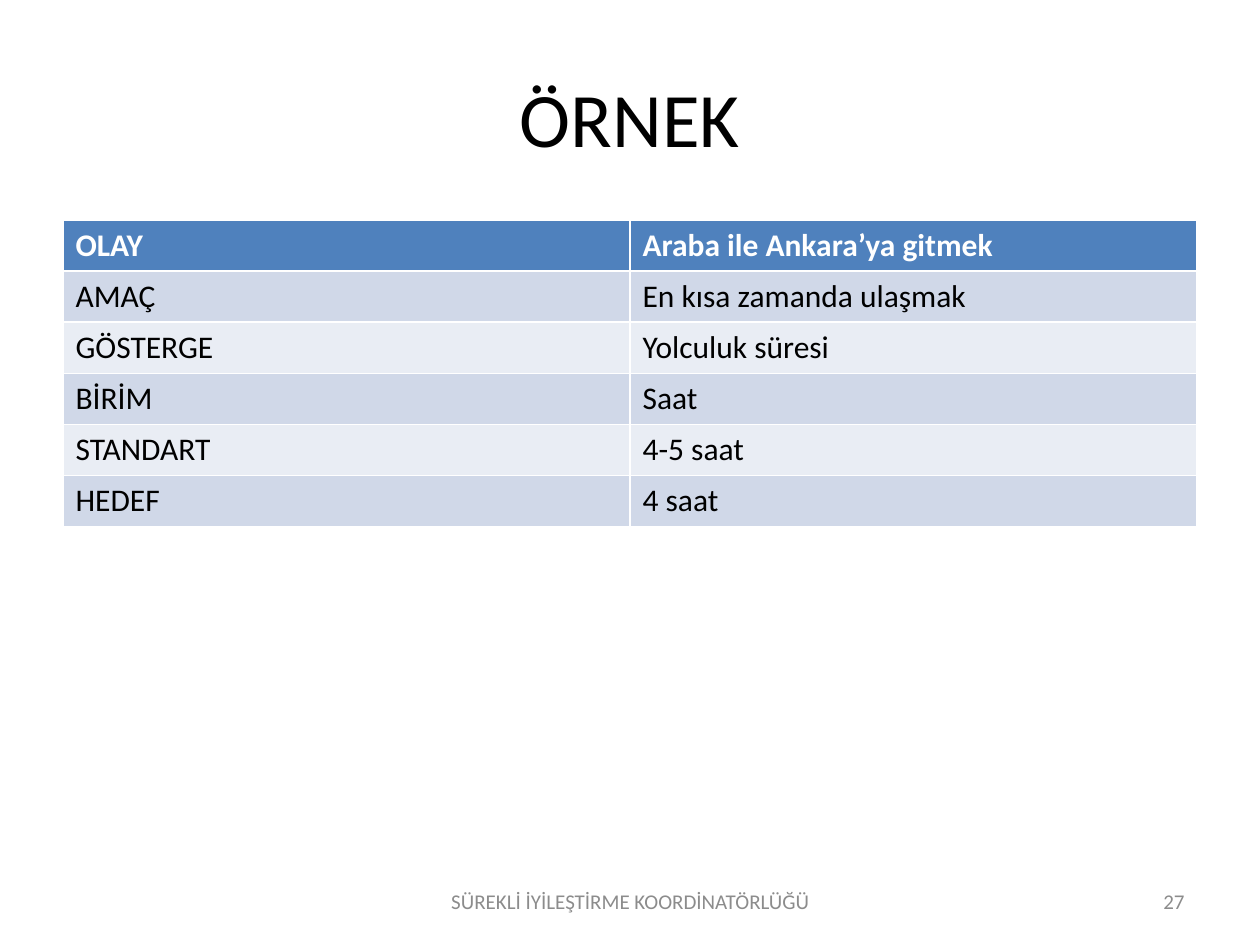
from pptx import Presentation
from pptx.dml.color import RGBColor
from pptx.enum.text import MSO_ANCHOR as Anchor, PP_ALIGN as Align
from pptx.util import Pt

# Content
TITLE = "ÖRNEK"
ROWS = [
    ("OLAY", "Araba ile Ankara’ya gitmek"),
    ("AMAÇ", "En kısa zamanda ulaşmak"),
    ("GÖSTERGE", "Yolculuk süresi"),
    ("BİRİM", "Saat"),
    ("STANDART", "4-5 saat"),
    ("HEDEF", "4 saat"),
]
# Text, left, width, alignment
FOOTERS = [
    ("SÜREKLİ İYİLEŞTİRME KOORDİNATÖRLÜĞÜ", 431, 399, Align.CENTER),
    ("27", 903, 294, Align.RIGHT),
]

# Style and measures
FONT = "Calibri"
HEADER_FILL = "4F81BD"
BAND_FILLS = ("E9EDF4", "D0D8E8")
MARGIN, CONTENT_WIDTH = 63, 1134
TABLE_TOP, ROW_HEIGHT = 220, 51
FOOTER_TOP, FOOTER_HEIGHT = 876, 50


def px(count):
    return round(count * 914400 / 126)


def color(value):
    return RGBColor.from_string(value)


def place(left, top, width, height):
    return [px(length) for length in (left, top, width, height)]


def write(frame, text, size, ink, align=Align.LEFT, bold=False):
    frame.text = text
    para = frame.paragraphs[0]
    para.alignment = align
    font = para.runs[0].font
    font.name, font.size, font.bold = FONT, Pt(size), bold
    font.color.rgb = color(ink)


deck = Presentation()
deck.slide_width, deck.slide_height = px(1260), px(945)
page = deck.slides.add_slide(deck.slide_layouts[5])

# Title
title = page.shapes.title
title.left, title.top, title.width, title.height = place(MARGIN, 38, CONTENT_WIDTH, 158)
title.text_frame.vertical_anchor = Anchor.MIDDLE
write(title.text_frame, TITLE, 44, "000000", Align.CENTER)

# Table: a header row, then alternating bands
table = page.shapes.add_table(
    len(ROWS), len(ROWS[0]),
    *place(MARGIN, TABLE_TOP, CONTENT_WIDTH, ROW_HEIGHT * len(ROWS))).table
for row_index, row in enumerate(ROWS):
    is_header = row_index == 0
    fill = HEADER_FILL if is_header else BAND_FILLS[row_index % 2]
    ink = "FFFFFF" if is_header else "000000"
    for column_index, text in enumerate(row):
        cell = table.cell(row_index, column_index)
        cell.fill.solid()
        cell.fill.fore_color.rgb = color(fill)
        write(cell.text_frame, text, 18, ink, bold=is_header)

# Footer and page number
for text, left, width, align in FOOTERS:
    box = page.shapes.add_textbox(*place(left, FOOTER_TOP, width, FOOTER_HEIGHT))
    box.text_frame.word_wrap = True
    box.text_frame.vertical_anchor = Anchor.MIDDLE
    write(box.text_frame, text, 12, "8C8C8C", align)

deck.save("out.pptx")
